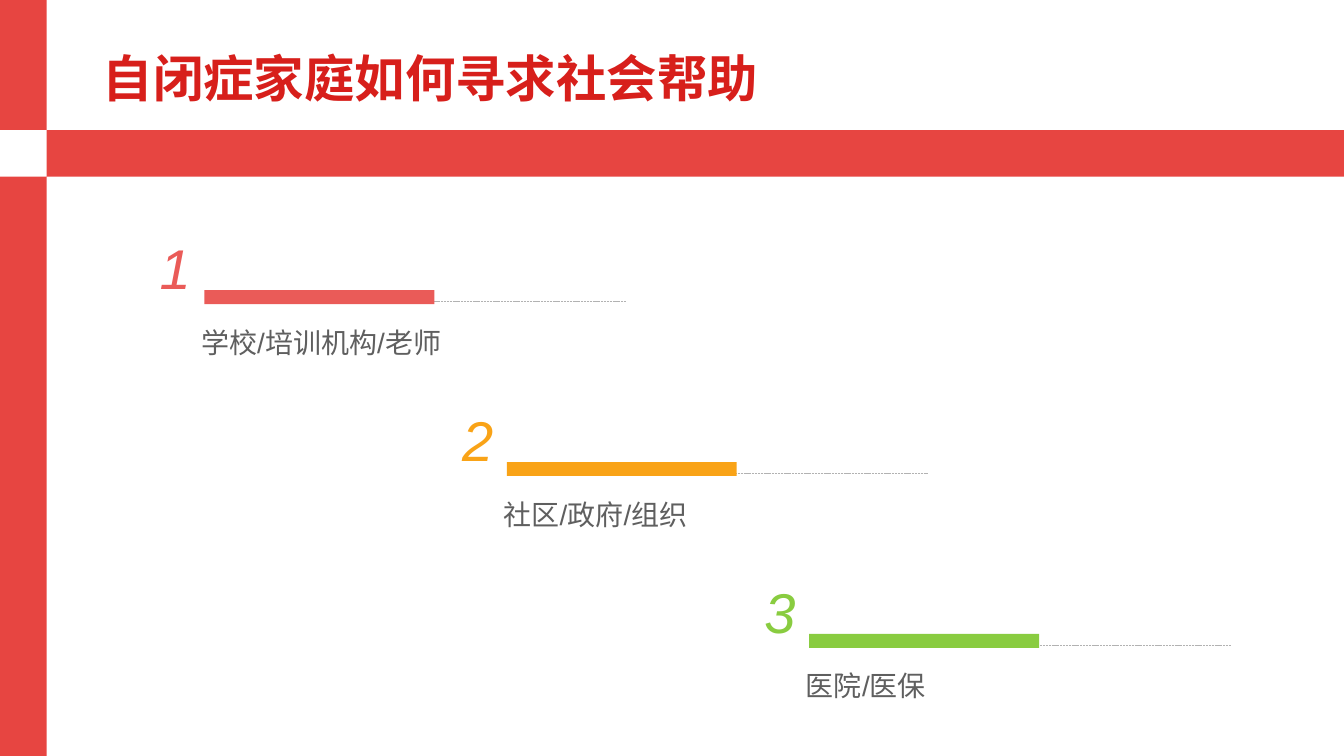
"""Build a slide of three stepped sources of help for families living with autism."""
from dataclasses import dataclass

from lxml import etree
from pptx import Presentation
from pptx.dml.color import RGBColor
from pptx.enum.dml import MSO_LINE
from pptx.enum.shapes import MSO_CONNECTOR, MSO_SHAPE
from pptx.enum.text import MSO_ANCHOR, MSO_AUTO_SIZE, PP_ALIGN
from pptx.oxml.ns import qn
from pptx.util import Pt

RECTANGLE = MSO_SHAPE.RECTANGLE
STRAIGHT = MSO_CONNECTOR.STRAIGHT
DASH = MSO_LINE.SQUARE_DOT
TOP, MIDDLE = MSO_ANCHOR.TOP, MSO_ANCHOR.MIDDLE
LEFT, CENTER = PP_ALIGN.LEFT, PP_ALIGN.CENTER
NO_AUTOFIT = MSO_AUTO_SIZE.NONE
TITLE_ONLY = 5


@dataclass(frozen=True)
class Theme:
    """Colours, font and type sizes of the slide."""
    font: str = "Arial"
    band: str = "E74541"
    background: str = "FFFFFF"
    title: str = "D71F1B"
    caption: str = "5F5F5F"
    rule: str = "B2B2B2"
    steps: tuple = ("EA5B58", "F9A317", "89CC40")
    title_size: int = 36
    number_size: int = 40
    caption_size: int = 20


THEME = Theme()
WIDTH, HEIGHT = 960, 540
BAND, BAND_TOP = 33.3, 92.9
FIRST_LEFT, FIRST_TOP = 146, 207.2
STEP_RIGHT, STEP_DOWN = 216, 122.8
CAPTIONS = ("学校/培训机构/老师", "社区/政府/组织", "医院/医保")


def write_text(shape, text, *, size, color, bold=False, italic=False,
               align=LEFT, anchor=TOP, spacing=1.0):
    """Fill a shape with one formatted paragraph."""
    frame = shape.text_frame
    frame.word_wrap = True
    frame.auto_size = NO_AUTOFIT
    frame.vertical_anchor = anchor
    paragraph = frame.paragraphs[0]
    paragraph.alignment = align
    paragraph.line_spacing = spacing
    run = paragraph.add_run()
    run.text = text
    font = run.font
    font.name, font.size = THEME.font, Pt(size)
    font.bold, font.italic = bold, italic
    font.color.rgb = RGBColor.from_string(color)


def add_block(shapes, left, top, width, height, color):
    """Add a plain filled rectangle."""
    block = shapes.add_shape(RECTANGLE, Pt(left), Pt(top), Pt(width), Pt(height))
    block.shadow.inherit = False
    block.fill.solid()
    block.fill.fore_color.rgb = RGBColor.from_string(color)
    block.line.fill.background()


def add_label(shapes, left, top, width, height, text, **text_format):
    """Add a text box with formatted text."""
    box = shapes.add_textbox(Pt(left), Pt(top), Pt(width), Pt(height))
    write_text(box, text, **text_format)


def add_dashed_rule(shapes, left, top, length):
    """Add a thin horizontal dashed line."""
    rule = shapes.add_connector(STRAIGHT, Pt(left), Pt(top), Pt(left + length), Pt(top))
    rule.line.color.rgb = RGBColor.from_string(THEME.rule)
    rule.line.width = Pt(0.5)
    rule.line.dash_style = DASH
    etree.SubElement(rule._element.spPr, qn("a:effectLst"))


def add_step(slide, number, caption, color):
    """Add a numbered bar with its rule and caption as one group."""
    left = FIRST_LEFT + (number - 1) * STEP_RIGHT
    top = FIRST_TOP + (number - 1) * STEP_DOWN
    shapes = slide.shapes.add_group_shape().shapes
    add_dashed_rule(shapes, left + 93.6, top + 8, 207.4)
    add_block(shapes, left, top, 164.3, 10, color)
    add_label(shapes, left - 9.4, top + 16.7, 343.4, 47.5, caption,
              size=THEME.caption_size, color=THEME.caption, spacing=1.2)
    add_label(shapes, left - 54, top - 65.3, 66.2, 83.5, str(number),
              size=THEME.number_size, color=color, italic=True,
              align=CENTER, anchor=MIDDLE, spacing=1.3)


def add_title(slide, text):
    """Place and format the title placeholder."""
    title = slide.shapes.title
    title.left, title.top, title.width, title.height = Pt(66.2), Pt(25.2), Pt(828), Pt(65.5)
    write_text(title, text, size=THEME.title_size, color=THEME.title,
               bold=True, anchor=MIDDLE, spacing=0.9)


def main():
    """Build and save the presentation."""
    presentation = Presentation()
    presentation.slide_width, presentation.slide_height = Pt(WIDTH), Pt(HEIGHT)
    slide = presentation.slides.add_slide(presentation.slide_layouts[TITLE_ONLY])
    add_block(slide.shapes, 0, 0, BAND, HEIGHT, THEME.band)
    add_block(slide.shapes, 0, BAND_TOP, WIDTH, BAND, THEME.band)
    add_block(slide.shapes, 0, BAND_TOP, BAND, BAND, THEME.background)
    add_title(slide, "自闭症家庭如何寻求社会帮助")
    for number, (caption, color) in enumerate(zip(CAPTIONS, THEME.steps), start=1):
        add_step(slide, number, caption, color)
    presentation.save("out.pptx")


if __name__ == "__main__":
    main()
